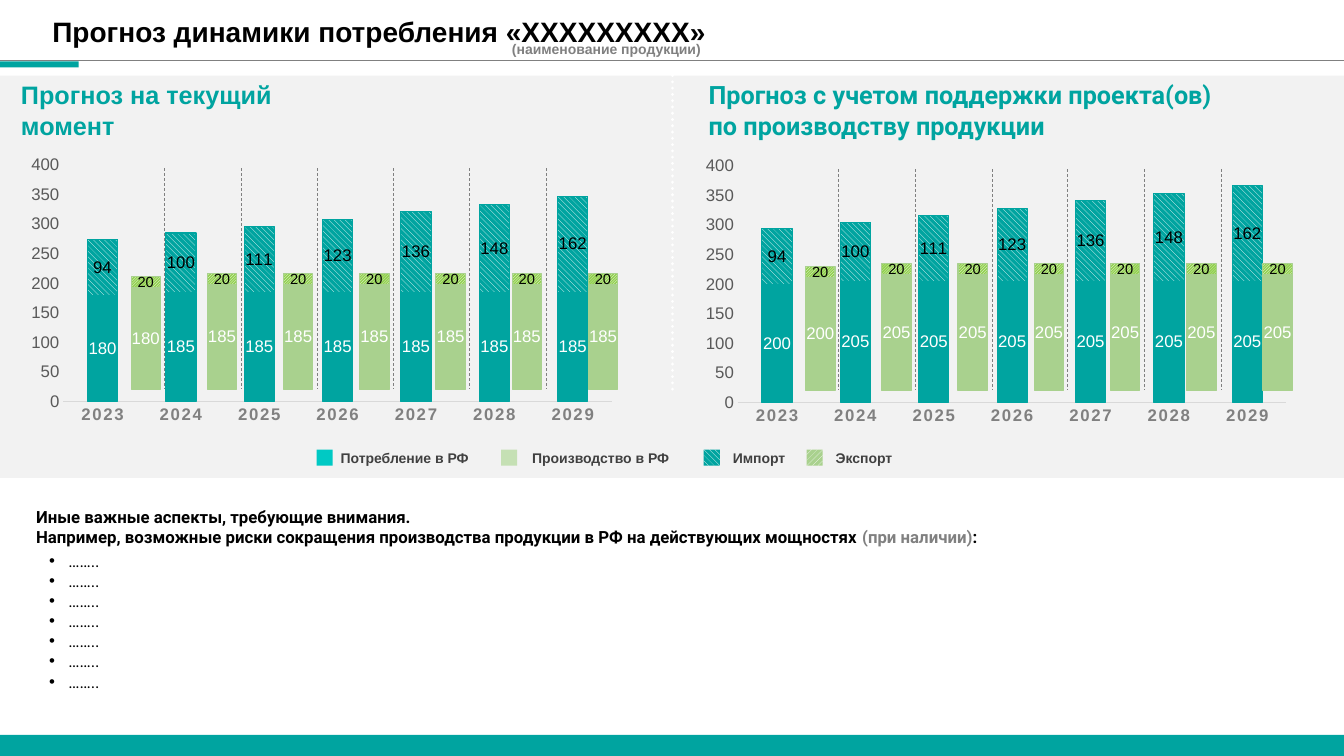
from pptx import Presentation
from pptx.chart.data import CategoryChartData
from pptx.dml.color import RGBColor
from pptx.enum.chart import XL_CHART_TYPE, XL_LABEL_POSITION, XL_TICK_MARK
from pptx.enum.dml import MSO_LINE, MSO_PATTERN
from pptx.enum.shapes import MSO_CONNECTOR, MSO_SHAPE
from pptx.oxml import parse_xml
from pptx.oxml.ns import nsdecls
from pptx.util import Pt

PX = 9144
WIDTH, HEIGHT = 1333, 750

TEAL = RGBColor(0x00, 0xA4, 0xA0)
BRIGHT_TEAL = RGBColor(0x00, 0xC9, 0xC4)
GREEN = RGBColor(0xA9, 0xD1, 0x8E)
PALE_GREEN = RGBColor(0xC5, 0xE0, 0xB4)
LIME = RGBColor(0x92, 0xD0, 0x50)
BLACK = RGBColor(0x00, 0x00, 0x00)
WHITE = RGBColor(0xFF, 0xFF, 0xFF)
PANEL_GRAY = RGBColor(0xF2, 0xF2, 0xF2)
AXIS_GRAY = RGBColor(0xD9, 0xD9, 0xD9)
GRAY = RGBColor(0x80, 0x80, 0x80)
DARK_GRAY = RGBColor(0x59, 0x59, 0x59)
LEGEND_GRAY = RGBColor(0x40, 0x40, 0x40)

STACKED = XL_CHART_TYPE.COLUMN_STACKED
CENTER = XL_LABEL_POSITION.CENTER
NO_TICK = XL_TICK_MARK.NONE
STRAIGHT = MSO_CONNECTOR.STRAIGHT
RECTANGLE = MSO_SHAPE.RECTANGLE
DASH, DOTS = MSO_LINE.DASH, MSO_LINE.ROUND_DOT
DOWN_STRIPES = MSO_PATTERN.WIDE_DOWNWARD_DIAGONAL
UP_STRIPES = MSO_PATTERN.WIDE_UPWARD_DIAGONAL
DARK_STRIPES = MSO_PATTERN.DARK_UPWARD_DIAGONAL

YEARS = [str(year) for year in range(2023, 2030)]
IMPORTS = [94, 100, 111, 123, 136, 148, 162]
EXPORTS = [20] * len(YEARS)
DEMAND_PLOT = (0.07, 0.05, 0.91, 0.85)
OUTPUT_PLOT = (0.06, 0.14, 0.94, 0.81)


def emu(*lengths):
    """Turn px lengths into EMU."""
    return [length * PX for length in lengths]


def style_font(font, size, color, bold=False, name="Arial"):
    """Set the look of a font."""
    font.size, font.bold, font.name = Pt(size), bold, name
    font.color.rgb = color


def paint(fill, color, pattern=None):
    """Fill with a plain colour or with white stripes on it."""
    if pattern is None:
        fill.solid()
        fill.fore_color.rgb = color
    else:
        fill.patterned()
        fill.pattern = pattern
        fill.fore_color.rgb, fill.back_color.rgb = WHITE, color


def add_text(slide, box, paragraphs, size=10, color=BLACK, bold=True,
             name="Arial", wrap=True, spacing=None, bullet=False):
    """Add a text box; each paragraph is a list of (text, colour or None)."""
    frame = slide.shapes.add_textbox(*emu(*box)).text_frame
    frame.word_wrap = wrap
    for index, pieces in enumerate(paragraphs):
        paragraph = frame.paragraphs[0] if index == 0 else frame.add_paragraph()
        paragraph.line_spacing = spacing
        for text, run_color in pieces:
            for part_index, part in enumerate(text.split("\n")):
                if part_index:
                    paragraph.add_line_break()
                run = paragraph.add_run()
                run.text = part
                style_font(run.font, size, run_color or color, bold, name)
        if bullet:
            properties = paragraph._p.get_or_add_pPr()
            properties.set("marL", str(19 * PX))
            properties.set("indent", str(-19 * PX))
            properties.append(parse_xml(f'<a:buFont {nsdecls("a")} typeface="Arial"/>'))
            properties.append(parse_xml(f'<a:buChar {nsdecls("a")} char="•"/>'))


def add_block(slide, box, color, pattern=None):
    """Add a rectangle without outline."""
    shape = slide.shapes.add_shape(RECTANGLE, *emu(*box))
    shape.shadow.inherit = False
    paint(shape.fill, color, pattern)
    shape.line.fill.background()


def add_line(slide, ends, color, width, dash=None):
    """Add a straight line and return it."""
    connector = slide.shapes.add_connector(STRAIGHT, *emu(*ends))
    connector.line.color.rgb = color
    connector.line.width = Pt(width)
    connector.line.dash_style = dash
    connector._element.spPr.append(parse_xml(f'<a:effectLst {nsdecls("a")}/>'))
    return connector


def add_columns(slide, box, categories, layers, plot_box):
    """Add a stacked chart; a layer is (name, values, fill, pattern, line, text, size)."""
    data = CategoryChartData()
    data.categories = categories
    for title, values, *_ in layers:
        data.add_series(title, values)
    chart = slide.shapes.add_chart(STACKED, *emu(*box), data).chart
    chart.has_legend = chart.has_title = False
    style_font(chart.font, 10, BLACK)
    plot = chart.plots[0]
    plot.gap_width, plot.overlap, plot.vary_by_categories = 159, 100, False
    for series, (_, _, color, pattern, edge, text_color, size) in zip(plot.series, layers):
        paint(series.format.fill, color, pattern)
        series.format.line.color.rgb = edge
        series.format.line.width = Pt(0.75)
        series.invert_if_negative = False
        labels = series.data_labels
        labels.show_value, labels.position = True, CENTER
        style_font(labels.font, size, text_color)
    axis = chart.value_axis
    axis.minimum_scale, axis.maximum_scale, axis.major_unit = 0, 400, 50
    axis.has_major_gridlines = False
    clear_background(chart, plot_box)
    return chart


def clear_background(chart, plot_box):
    """Make the chart see-through and pin its inner plot area."""
    space = chart._chartSpace
    clear = f'<c:spPr {nsdecls("c", "a")}><a:noFill/><a:ln><a:noFill/></a:ln></c:spPr>'
    space.find("{*}txPr").addprevious(parse_xml(clear))
    area = space.chart.plotArea
    area.append(parse_xml(clear))
    for layout in area.findall("{*}layout"):
        area.remove(layout)
    sizes = "".join(f'<c:{key} val="{value}"/>' for key, value in zip("xywh", plot_box))
    area.insert(0, parse_xml(
        f'<c:layout {nsdecls("c")}><c:manualLayout><c:layoutTarget val="inner"/>'
        f'<c:xMode val="edge"/><c:yMode val="edge"/>{sizes}</c:manualLayout></c:layout>'))


def add_forecast(slide, left, top, volumes):
    """Draw demand columns, output columns over them and year dividers."""
    demand = add_columns(slide, (left, top, 598, 276), YEARS, [
        ("Потребление в РФ", volumes, TEAL, None, TEAL, WHITE, 12),
        ("Импорт", IMPORTS, TEAL, DOWN_STRIPES, TEAL, BLACK, 12)], DEMAND_PLOT)
    years, amounts = demand.category_axis, demand.value_axis
    for axis in (years, amounts):
        axis.major_tick_mark = axis.minor_tick_mark = NO_TICK
    style_font(years.tick_labels.font, 12, GRAY, bold=True)
    years._element.find(".//{*}defRPr").set("spc", "120")
    years.format.line.color.rgb = AXIS_GRAY
    years.format.line.width = Pt(0.75)
    style_font(amounts.tick_labels.font, 12, DARK_GRAY)
    amounts.format.line.fill.background()

    output = add_columns(slide, (left + 52, top - 26, 563, 276), YEARS, [
        ("Производство в РФ", volumes, GREEN, None, GREEN, WHITE, 12),
        ("Экспорт", EXPORTS, LIME, DARK_STRIPES, GREEN, BLACK, 10.5)], OUTPUT_PLOT)
    output.category_axis.visible = output.value_axis.visible = False

    for index in range(len(YEARS) - 1):
        x = left + 142 + round(index * 75.8)
        add_line(slide, (x, top + 17, x, top + 236), GRAY, 0.5, DASH)


def add_header(slide):
    """Draw the title, its caption and the rule below."""
    add_line(slide, (0, 60, WIDTH, 60), GRAY, 0.5)
    add_block(slide, (0, 61, 78, 6), TEAL)
    add_text(slide, (42, 13, 1219, 54), [[("Прогноз динамики потребления «ХХХХХХХХХ»", None)]],
             size=20, spacing=0.9)
    add_text(slide, (498, 35, 214, 27), [[("(наименование продукции)", GRAY)]], wrap=False)


def add_legend(slide, top):
    """Draw the shared legend: swatch left, text left, label and fill."""
    for left, text_left, label, color, pattern in (
            (314, 328, "Потребление в РФ", BRIGHT_TEAL, None),
            (497, 518, "Производство в РФ", PALE_GREEN, None),
            (698, 717, "Импорт", TEAL, DOWN_STRIPES),
            (800, 819, "Экспорт", GREEN, UP_STRIPES)):
        add_block(slide, (left, top + 5, 16, 16), color, pattern)
        add_text(slide, (text_left, top, 171, 27), [[(label, None)]], color=LEGEND_GRAY)


def add_notes_area(slide, left, top):
    """Draw the remarks with their bullet list."""
    add_text(slide, (left, top, 1190, 50), [
        [("Иные важные аспекты, требующие внимания.", None)],
        [("Например, возможные риски сокращения производства продукции в РФ "
          "на действующих мощностях ", None), ("(при наличии)", GRAY), (":", None)]],
        size=12, name="Roboto")
    add_text(slide, (left + 13, top + 43, 1190, 151), [[("……..", None)]] * 7,
             size=12, bold=False, name="Roboto", bullet=True)


def main():
    """Build the slide and save it."""
    presentation = Presentation()
    presentation.slide_width, presentation.slide_height = emu(WIDTH, HEIGHT)
    slide = presentation.slides.add_slide(presentation.slide_layouts[6])
    add_block(slide, (0, 75, WIDTH, 399), PANEL_GRAY)
    add_header(slide)
    add_text(slide, (11, 74, 341, 71), [[("Прогноз на текущий момент", None)]],
             size=18, color=TEAL)
    add_text(slide, (693, 74, 632, 71),
             [[("Прогноз с учетом поддержки проекта(ов)\nпо производству продукции", None)]],
             size=18, color=TEAL, name="Roboto")
    divider = add_line(slide, (667, 75, 667, 387), WHITE, 2.25, DOTS)
    divider.get_or_add_ln().set("cap", "rnd")
    add_forecast(slide, 21, 150, [180] + [185] * 6)
    add_forecast(slide, 690, 151, [200] + [205] * 6)
    add_legend(slide, 441)
    add_notes_area(slide, 26, 498)
    add_block(slide, (0, 729, WIDTH, 21), TEAL)
    presentation.save("out.pptx")


if __name__ == "__main__":
    main()
